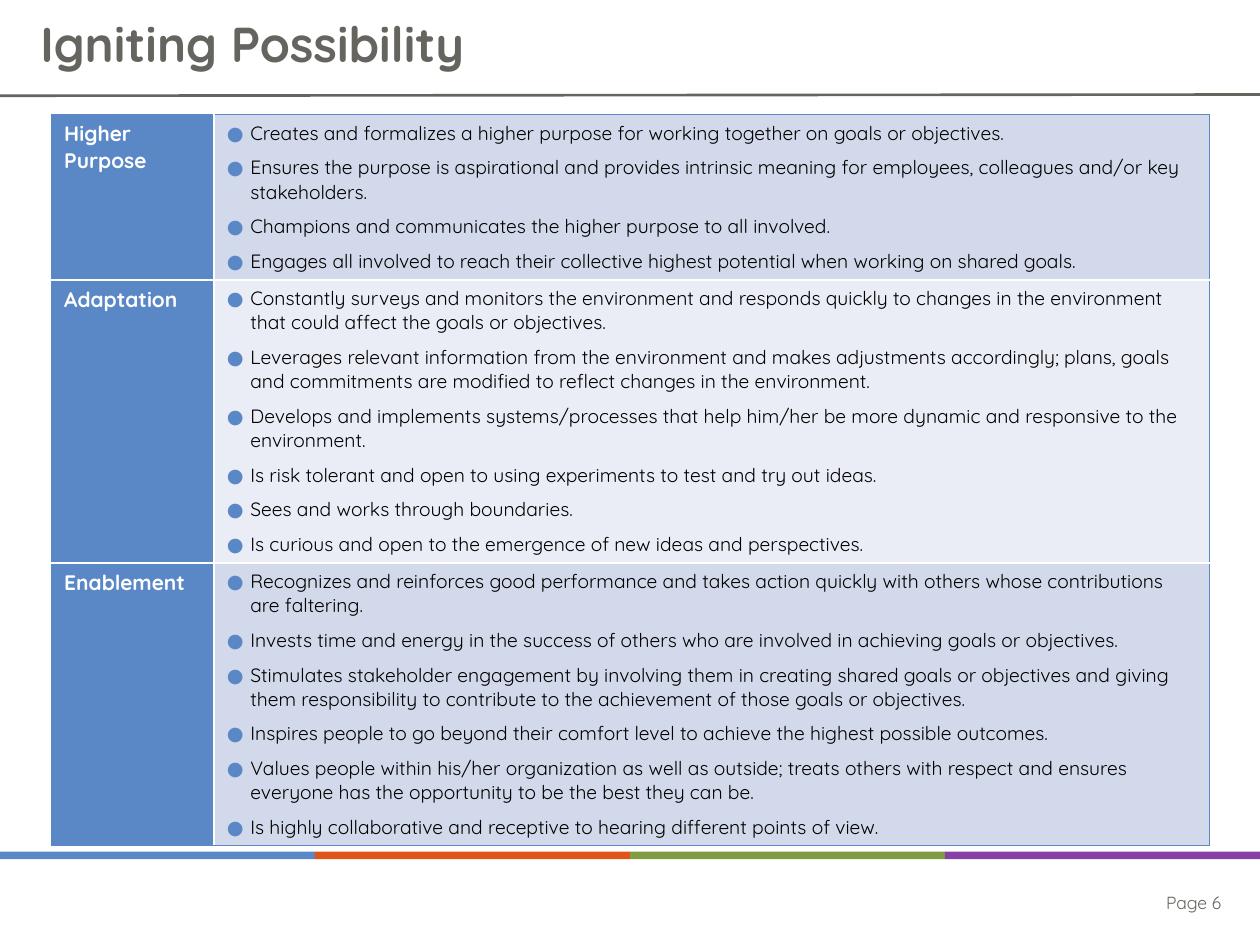
from dataclasses import dataclass

from lxml.etree import SubElement
from pptx import Presentation
from pptx.dml.color import RGBColor as Color
from pptx.enum.shapes import MSO_CONNECTOR as Connector, MSO_SHAPE as Shape
from pptx.enum.text import MSO_ANCHOR as Anchor, PP_ALIGN as Align
from pptx.oxml.ns import qn
from pptx.util import Pt


@dataclass(frozen=True)
class Theme:
    """Colours, font and type sizes of the slide."""
    font: str = "Quicksand"
    gray: str = "66645E"
    white: str = "FFFFFF"
    black: str = "000000"
    blue: str = "5A87C6"
    stripes: tuple = ("5A87C6", "DF5517", "829C42", "8640A6")
    bands: tuple = ("D2D9EA", "EAEDF5")
    title_size: int = 28
    heading_size: int = 12
    body_size: int = 11
    footer_size: int = 10


THEME = Theme()
WIDTH, HEIGHT = 720, 540
COLUMN_WIDTHS = (92.88, 568.8)
ROW_HEIGHTS = (94.6, 161.6, 161.6)

PRACTICES = {
    "Higher Purpose": [
        "Creates and formalizes a higher purpose for working together on goals or objectives.",
        "Ensures the purpose is aspirational and provides intrinsic meaning for employees, "
        "colleagues and/or key stakeholders.",
        "Champions and communicates the higher purpose to all involved.",
        "Engages all involved to reach their collective highest potential when working on shared goals.",
    ],
    "Adaptation": [
        "Constantly surveys and monitors the environment and responds quickly to changes in the "
        "environment that could affect the goals or objectives.",
        "Leverages relevant information from the environment and makes adjustments accordingly; "
        "plans, goals and commitments are modified to reflect changes in the environment.",
        "Develops and implements systems/processes that help him/her be more dynamic and "
        "responsive to the environment.",
        "Is risk tolerant and open to using experiments to test and try out ideas.",
        "Sees and works through boundaries.",
        "Is curious and open to the emergence of new ideas and perspectives.",
    ],
    "Enablement": [
        "Recognizes and reinforces good performance and takes action quickly with others whose "
        "contributions are faltering.",
        "Invests time and energy in the success of others who are involved in achieving goals or objectives.",
        "Stimulates stakeholder engagement by involving them in creating shared goals or objectives "
        "and giving them responsibility to contribute to the achievement of those goals or objectives.",
        "Inspires people to go beyond their comfort level to achieve the highest possible outcomes.",
        "Values people within his/her organization as well as outside; treats others with respect "
        "and ensures everyone has the opportunity to be the best they can be.",
        "Is highly collaborative and receptive to hearing different points of view.",
    ],
}


def add_bullet(paragraph, color, indent=13.5):
    """Give a paragraph a hanging round bullet."""
    properties = paragraph._p.get_or_add_pPr()
    properties.set("marL", str(Pt(indent)))
    properties.set("indent", str(-Pt(indent)))
    SubElement(SubElement(properties, qn("a:buClr")), qn("a:srgbClr"), val=color)
    SubElement(properties, qn("a:buFont"), typeface=THEME.font)
    SubElement(properties, qn("a:buChar"), char="●")


def write(frame, *texts, size, color, bold=False, align=Align.LEFT,
          space_after=0, line_spacing=1.0, bullet=None):
    """Fill a text frame with one formatted paragraph per text."""
    for index, text in enumerate(texts):
        paragraph = frame.add_paragraph() if index else frame.paragraphs[0]
        if bullet:
            add_bullet(paragraph, bullet)
        paragraph.alignment = align
        paragraph.space_before = Pt(0)
        paragraph.space_after = Pt(space_after)
        paragraph.line_spacing = line_spacing
        run = paragraph.add_run()
        run.text = text
        run.font.name = THEME.font
        run.font.size = Pt(size)
        run.font.bold = bold
        run.font.color.rgb = Color.from_string(color)


def style_cell(cell, fill, borders):
    """Set the fill and the left, right, top and bottom borders of a cell."""
    properties = cell._tc.get_or_add_tcPr()
    for side, color in zip("LRTB", borders):
        line = SubElement(properties, qn(f"a:ln{side}"), w=str(Pt(1)))
        SubElement(SubElement(line, qn("a:solidFill")), qn("a:srgbClr"), val=color)
    cell.fill.solid()
    cell.fill.fore_color.rgb = Color.from_string(fill)


class SlideBuilder:
    """Holds the theme and the current slide, and adds elements to it."""

    def __init__(self, slide, theme):
        """Keep the slide and its theme."""
        self.slide = slide
        self.theme = theme

    def title(self, text, left, top, width, height):
        """Place and fill the title placeholder."""
        shape = self.slide.shapes.title
        shape.left, shape.top, shape.width, shape.height = map(Pt, (left, top, width, height))
        shape.text_frame.vertical_anchor = Anchor.MIDDLE
        write(shape.text_frame, text, size=self.theme.title_size,
              color=self.theme.gray, bold=True, line_spacing=0.9)

    def rule(self, start, end):
        """Draw a straight line between two points."""
        line = self.slide.shapes.add_connector(Connector.STRAIGHT, *map(Pt, start + end))
        line.line.color.rgb = Color.from_string(self.theme.gray)
        line.line.width = Pt(1.5)
        SubElement(line._element.spPr, qn("a:effectLst"))

    def stripe(self, top, height):
        """Draw equal coloured bars across the slide."""
        width = WIDTH / len(self.theme.stripes)
        for index, color in enumerate(self.theme.stripes):
            bar = self.slide.shapes.add_shape(
                Shape.RECTANGLE, Pt(index * width), Pt(top), Pt(width), Pt(height))
            bar.shadow.inherit = False
            bar.fill.solid()
            bar.fill.fore_color.rgb = Color.from_string(color)
            bar.line.fill.background()

    def footer(self, text, left, top, width, height):
        """Add right-aligned footer text."""
        box = self.slide.shapes.add_textbox(*map(Pt, (left, top, width, height)))
        box.text_frame.word_wrap = True
        write(box.text_frame, text, size=self.theme.footer_size,
              color=self.theme.gray, align=Align.RIGHT)

    def table(self, content, left, top):
        """Add a table of headings with bulleted practices."""
        theme = self.theme
        table = self.slide.shapes.add_table(
            len(content), len(COLUMN_WIDTHS), Pt(left), Pt(top),
            Pt(sum(COLUMN_WIDTHS)), Pt(sum(ROW_HEIGHTS))).table
        table.first_row = table.horz_banding = False
        for column, width in zip(table.columns, COLUMN_WIDTHS):
            column.width = Pt(width)
        last = len(content) - 1
        for index, (heading, practices) in enumerate(content.items()):
            table.rows[index].height = Pt(ROW_HEIGHTS[index])
            name, details = table.rows[index].cells
            upper = theme.white if index else theme.blue
            lower = theme.blue if index == last else theme.white
            style_cell(name, theme.blue, (theme.blue, theme.white, upper, lower))
            style_cell(details, theme.bands[index % 2], (theme.white, theme.blue, upper, lower))
            write(name.text_frame, heading, size=theme.heading_size,
                  color=theme.white, bold=True, space_after=6)
            write(details.text_frame, *practices, size=theme.body_size,
                  color=theme.black, space_after=6, bullet=theme.blue)


def main():
    """Build and save the slide."""
    presentation = Presentation()
    presentation.slide_width, presentation.slide_height = Pt(WIDTH), Pt(HEIGHT)
    builder = SlideBuilder(presentation.slides.add_slide(presentation.slide_layouts[5]), THEME)
    builder.rule((0, 54.72), (WIDTH, 54))
    builder.stripe(486.72, 4.32)
    builder.footer("Page 6", 584.64, 506.16, 120.24, 19.44)
    builder.title("Igniting Possibility", 15.84, 0, 688.32, 53.28)
    builder.table(PRACTICES, 29.52, 65.52)
    presentation.save("out.pptx")


if __name__ == "__main__":
    main()
